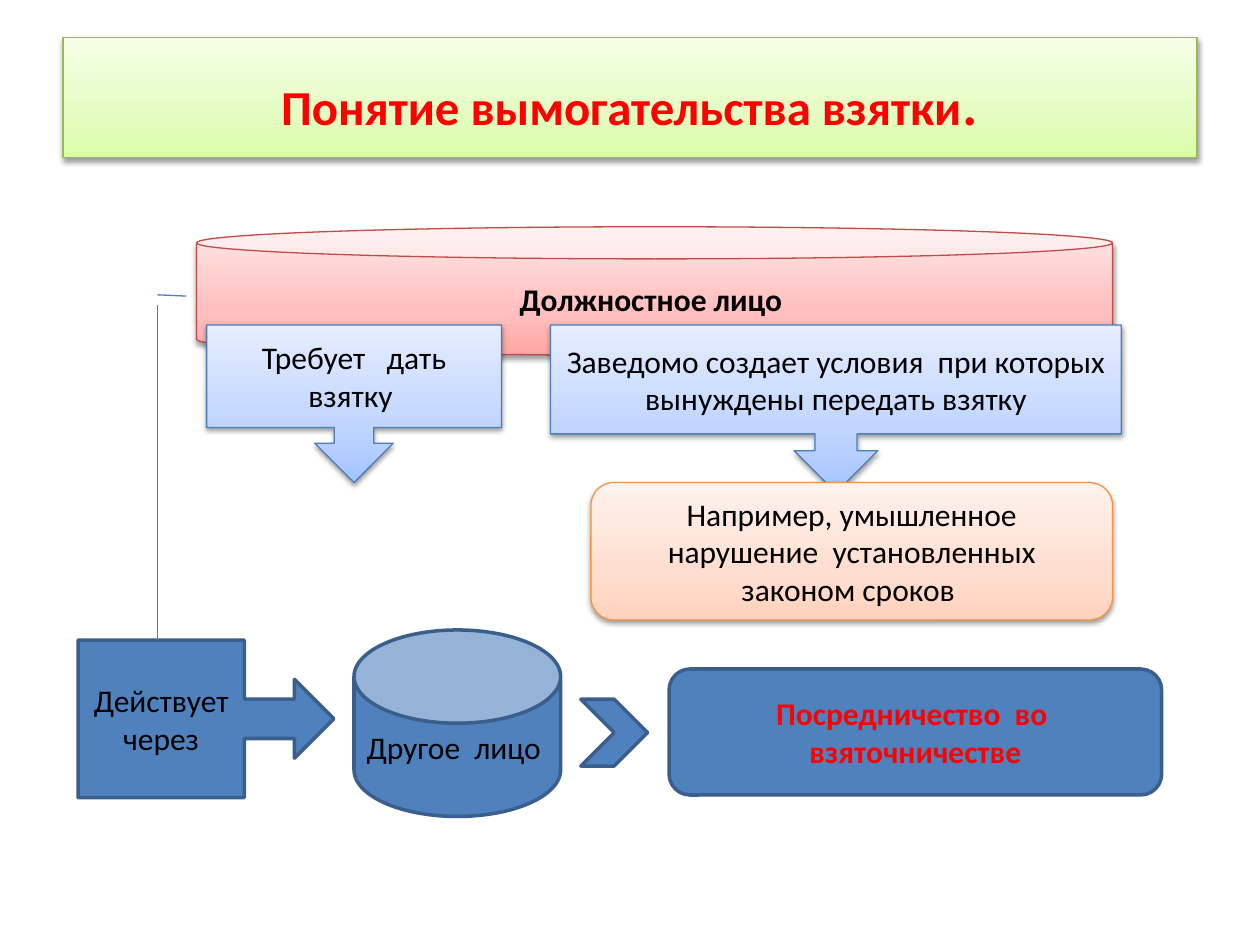
from copy import deepcopy
from dataclasses import dataclass

from lxml import etree
from pptx import Presentation
from pptx.dml.color import RGBColor
from pptx.enum.shapes import MSO_CONNECTOR, MSO_SHAPE
from pptx.enum.text import MSO_ANCHOR, MSO_AUTO_SIZE, PP_ALIGN
from pptx.oxml import parse_xml
from pptx.oxml.ns import nsdecls, qn
from pptx.util import Inches, Pt

CAN = MSO_SHAPE.CAN
CHEVRON = MSO_SHAPE.CHEVRON
DOWN_CALLOUT = MSO_SHAPE.DOWN_ARROW_CALLOUT
RIGHT_CALLOUT = MSO_SHAPE.RIGHT_ARROW_CALLOUT
ROUNDED = MSO_SHAPE.ROUNDED_RECTANGLE
STRAIGHT = MSO_CONNECTOR.STRAIGHT
CENTER = PP_ALIGN.CENTER
MIDDLE = MSO_ANCHOR.MIDDLE
NO_AUTOFIT = MSO_AUTO_SIZE.NONE
TITLE_ONLY = 5


@dataclass(frozen=True)
class Look:
    fills: tuple
    line: str
    width: float = 0.75


@dataclass(frozen=True)
class Theme:
    font: str = "Calibri"
    text: str = "000000"
    accent: str = "FF0000"
    body_size: float = 18
    title_size: float = 27.9
    stop_size: float = 39.6
    gradient_positions: tuple = (0, 0.35, 1)
    green: Look = Look(("DAFDA7", "E4FCC2", "F5FFE7"), "98B955")
    red: Look = Look(("FFA6A5", "FFC0BF", "FFE7E7"), "BF4C48")
    blue: Look = Look(("A4C4FF", "BFD4FF", "E6EEFF"), "4B7EBC")
    orange: Look = Look(("FFD2BD", "FFDED0", "FFF2ED"), "F69240")
    solid: Look = Look(("4F81BD",), "3A5F8C", 2)


class SlideBuilder:
    """Draws styled titles, boxes and lines on one slide."""

    def __init__(self, slide, theme):
        self.slide = slide
        self.theme = theme

    def paint(self, shape, look):
        shape.line.color.rgb = RGBColor.from_string(look.line)
        shape.line.width = Pt(look.width)
        shape.shadow.inherit = False
        if len(look.fills) == 1:
            shape.fill.solid()
            shape.fill.fore_color.rgb = RGBColor.from_string(look.fills[0])
            return
        shape.fill.gradient()
        shape.fill.gradient_angle = 90
        properties = shape._element.spPr
        stops = properties.find(".//" + qn("a:gsLst"))
        stops.append(deepcopy(stops[0]))
        for stop, position, color in zip(
            shape.fill.gradient_stops, self.theme.gradient_positions, look.fills
        ):
            stop.position = position
            stop.color.rgb = RGBColor.from_string(color)
        properties.find(qn("a:effectLst")).append(parse_xml(
            f'<a:outerShdw {nsdecls("a")} blurRad="{Pt(3.1)}" dist="{Pt(1.6)}" '
            'dir="5400000" rotWithShape="0"><a:srgbClr val="000000">'
            '<a:alpha val="38000"/></a:srgbClr></a:outerShdw>'
        ))

    def format_span(self, span, size, color, bold):
        span.font.name = self.theme.font
        span.font.size = Pt(size)
        span.font.bold = bold
        span.font.color.rgb = RGBColor.from_string(color)

    def arrange_text(self, frame):
        frame.word_wrap = True
        frame.auto_size = NO_AUTOFIT
        frame.vertical_anchor = MIDDLE
        frame.paragraphs[0].alignment = CENTER

    def title(self, text, ending, left, top, width, height):
        title = self.slide.shapes.title
        title.left, title.top = Inches(left), Inches(top)
        title.width, title.height = Inches(width), Inches(height)
        self.paint(title, self.theme.green)
        title.text_frame.text = text
        para = title.text_frame.paragraphs[0]
        self.format_span(para.runs[0], self.theme.title_size, self.theme.accent, True)
        span = para.add_run()
        span.text = ending
        self.format_span(span, self.theme.stop_size, self.theme.accent, False)
        self.arrange_text(title.text_frame)

    def box(self, kind, look, left, top, width, height, text="", accent=False, bold=False):
        box = self.slide.shapes.add_shape(
            kind, Inches(left), Inches(top), Inches(width), Inches(height)
        )
        self.paint(box, look)
        if text:
            box.text_frame.text = text
            color = self.theme.accent if accent else self.theme.text
            span = box.text_frame.paragraphs[0].runs[0]
            self.format_span(span, self.theme.body_size, color, bold)
            self.arrange_text(box.text_frame)
        return box

    def line(self, start_x, start_y, end_x, end_y):
        line = self.slide.shapes.add_connector(
            STRAIGHT, Inches(start_x), Inches(start_y), Inches(end_x), Inches(end_y)
        )
        line.line.color.rgb = RGBColor.from_string(self.theme.blue.line)
        line.line.width = Pt(self.theme.blue.width)
        etree.SubElement(line._element.spPr, qn("a:effectLst"))


def main():
    deck = Presentation()
    deck.slide_width, deck.slide_height = Inches(10), Inches(7.5)
    page = deck.slides.add_slide(deck.slide_layouts[TITLE_ONLY])
    theme = Theme()
    builder = SlideBuilder(page, theme)

    builder.title("Понятие вымогательства взятки", ".", 0.5, 0.3, 9, 0.95)
    builder.box(CAN, theme.red, 1.56, 1.8, 7.27, 1.02, "Должностное лицо ", bold=True)
    builder.box(DOWN_CALLOUT, theme.blue, 1.64, 2.58, 2.34, 1.25, "Требует   дать взятку ")
    builder.box(DOWN_CALLOUT, theme.blue, 4.37, 2.58, 4.53, 1.33,
                "Заведомо создает условия  при которых вынуждены передать взятку")
    builder.box(ROUNDED, theme.orange, 4.69, 3.83, 4.14, 1.09,
                "Например, умышленное нарушение  установленных законом сроков ")

    other_person = builder.box(CAN, theme.solid, 2.81, 5, 1.64, 1.48, "Другое  лицо ")
    other_person.adjustments[0] = 0.5
    builder.box(CHEVRON, theme.solid, 4.61, 5.55, 0.53, 0.53)
    builder.box(RIGHT_CALLOUT, theme.solid, 0.62, 5.08, 2.03, 1.25, "Действует  через ")
    builder.box(ROUNDED, theme.solid, 5.31, 5.31, 3.91, 1,
                "Посредничество  во  взяточничестве", accent=True, bold=True)

    builder.line(1.48, 2.35, 1.25, 2.34)
    builder.line(1.25, 2.42, 1.25, 5.08)
    deck.save("out.pptx")


if __name__ == "__main__":
    main()
